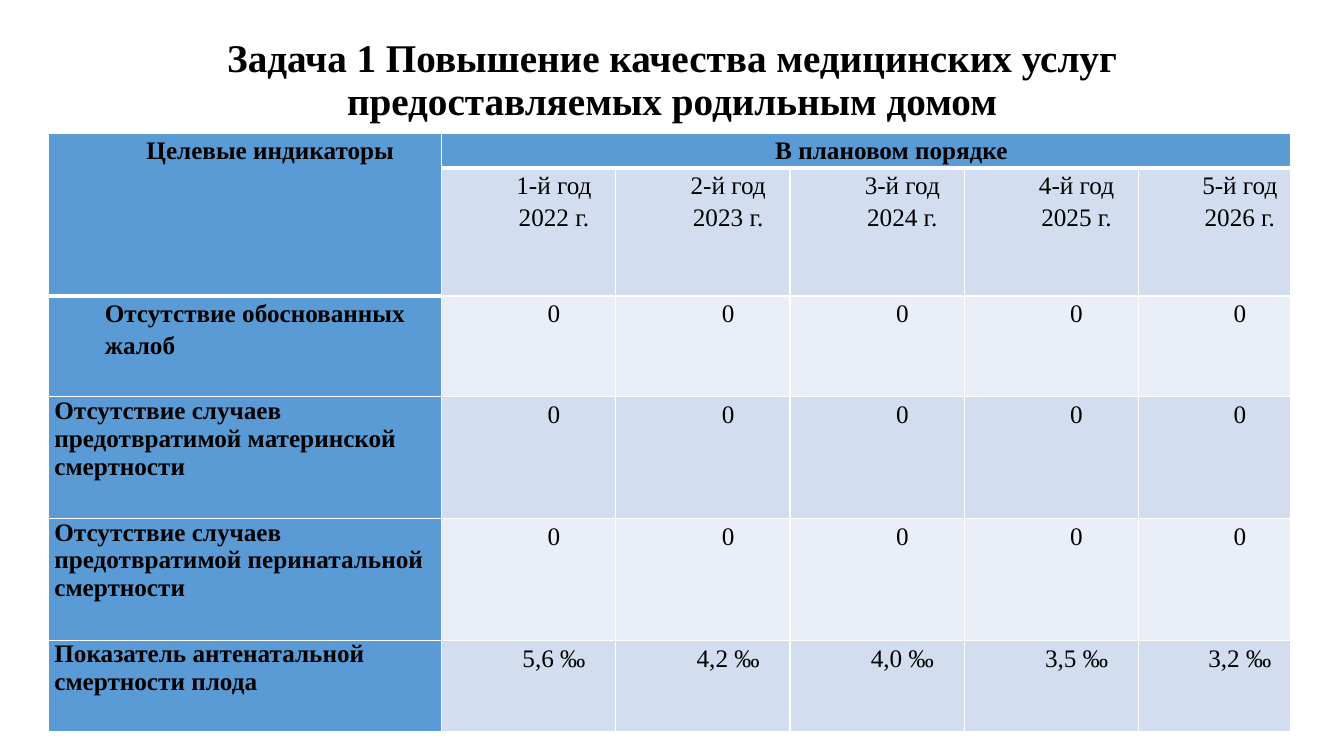
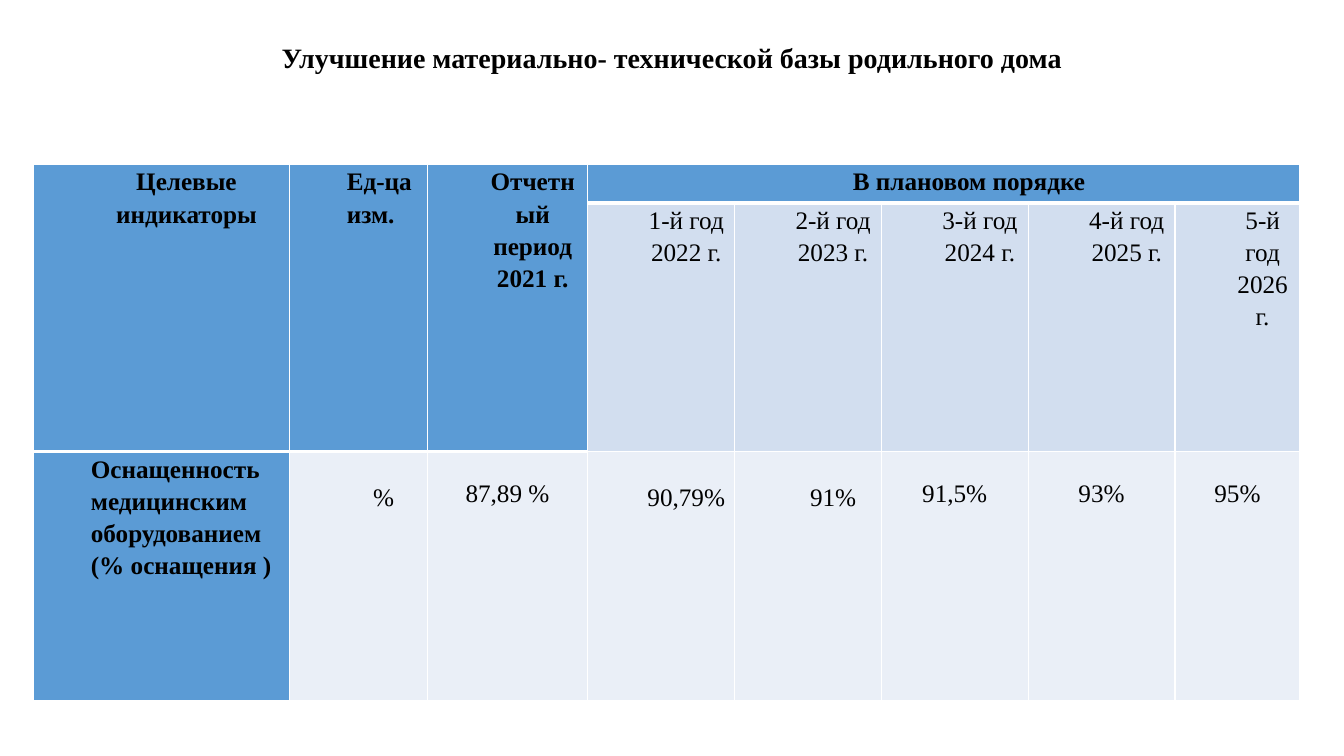
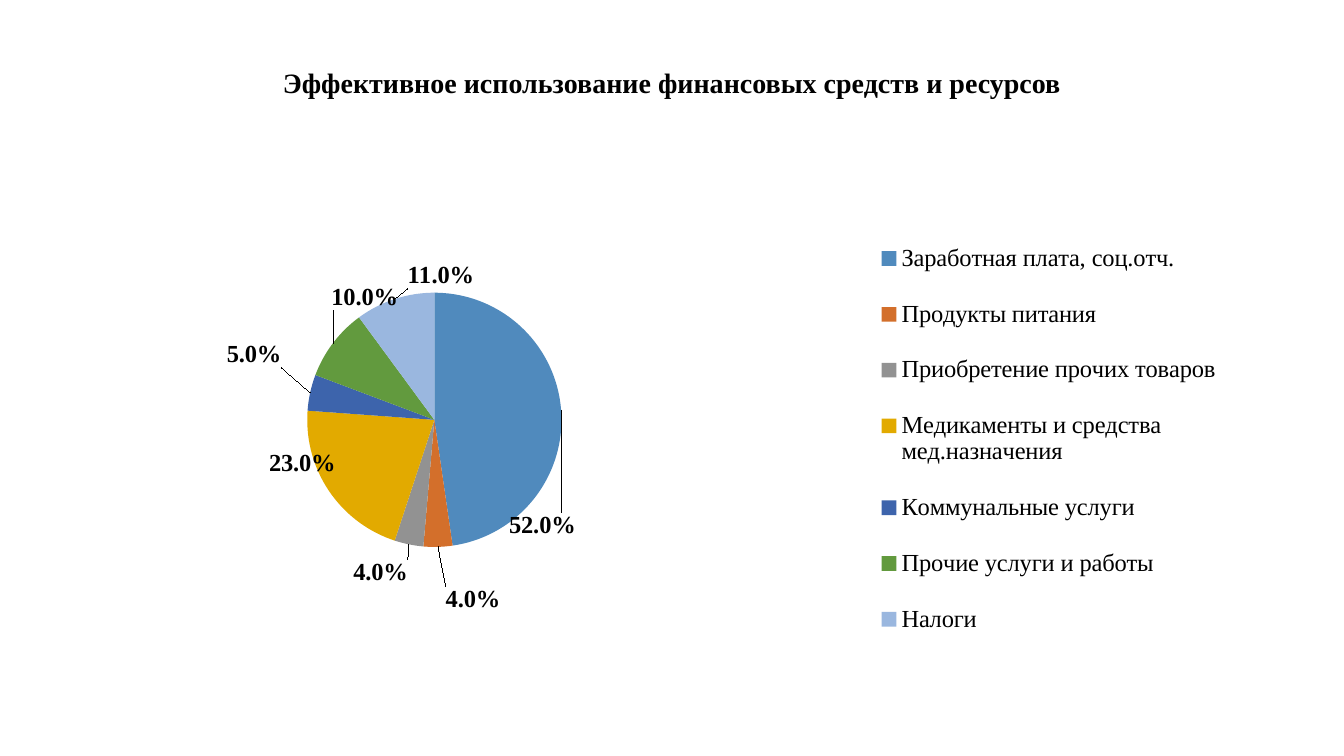
from lxml import etree
from pptx import Presentation
from pptx.chart.data import CategoryChartData
from pptx.dml.color import RGBColor
from pptx.enum.chart import XL_CHART_TYPE, XL_LABEL_POSITION, XL_LEGEND_POSITION
from pptx.enum.text import MSO_ANCHOR, PP_ALIGN
from pptx.oxml.ns import qn
from pptx.util import Cm, Pt

PIE = XL_CHART_TYPE.PIE
OUTSIDE_END = XL_LABEL_POSITION.OUTSIDE_END
RIGHT = XL_LEGEND_POSITION.RIGHT
MIDDLE = MSO_ANCHOR.MIDDLE
CENTER = PP_ALIGN.CENTER
LEFT = PP_ALIGN.LEFT

FONT = "Times New Roman"
COLORS = {
    "text": "000000",
    "header": "5B9BD5",
    "odd_band": "D2DEEF",
    "even_band": "EAEFF7",
    "border": "FFFFFF",
}
PIE_COLORS = ["508ABD", "D36F2B", "929292", "E2AA00", "3D64AC", "629A3E", "9AB7DF"]


def style_font(font, size, bold=False):
    font.name = FONT
    font.size = Pt(size)
    font.bold = bold
    font.color.rgb = RGBColor.from_string(COLORS["text"])


def set_layout(parent, index, **values):
    for old_layout in parent.findall(qn("c:layout")):
        parent.remove(old_layout)
    layout = etree.Element(qn("c:layout"))
    manual = etree.SubElement(layout, qn("c:manualLayout"))
    for name, value in values.items():
        etree.SubElement(manual, qn(f"c:{name}")).set("val", str(value))
    parent.insert(index, layout)


presentation = Presentation()
presentation.slide_width = Cm(33.87)
presentation.slide_height = Cm(19.05)

titles = [
    ("Задача 1 Повышение качества медицинских услуг предоставляемых родильным домом", 28, 0.95),
    ("Улучшение материально- технической базы родильного дома", 20, 0.4),
    ("Эффективное использование финансовых средств и ресурсов", 20, 1.02),
]
slides = []
for title, size, top in titles:
    slide = presentation.slides.add_slide(presentation.slide_layouts[6])
    slides.append(slide)
    title_box = slide.shapes.add_textbox(Cm(2.33), Cm(top), Cm(29.21), Cm(2.2))
    title_frame = title_box.text_frame
    title_frame.word_wrap = True
    title_frame.vertical_anchor = MIDDLE
    title_frame.text = title
    paragraph = title_frame.paragraphs[0]
    paragraph.alignment = CENTER
    paragraph.line_spacing = 0.9
    style_font(paragraph.font, size, True)

years = [f"{number}-й год\n{2021 + number} г." for number in range(1, 6)]
plan_header = ["В плановом порядке"] + [""] * 4
tables = [
    {
        "left": 1.22,
        "top": 3.35,
        "columns": [9.91] + [4.39] * 4 + [3.84],
        "heights": [0.84, 3.23, 2.54, 3.07, 3.07, 2.31],
        "label_columns": 1,
        "side_margin": 0.15,
        "left_aligned": {(2, 0), (3, 0), (4, 0), (5, 0)},
        "plain": {(3, 0), (4, 0), (5, 0)},
        "lowered": set(),
        "rows": [
            ["Целевые индикаторы"] + plan_header,
            [""] + years,
            ["Отсутствие обоснованных жалоб"] + ["0"] * 5,
            ["Отсутствие случаев предотвратимой материнской смертности"] + ["0"] * 5,
            ["Отсутствие случаев предотвратимой перинатальной смертности"] + ["0"] * 5,
            ["Показатель антенатальной смертности плода", "5,6 ‰", "4,2 ‰", "4,0 ‰", "3,5 ‰", "3,2 ‰"],
        ],
    },
    {
        "left": 0.84,
        "top": 4.14,
        "columns": [6.45, 3.48, 4.04] + [3.7] * 4 + [3.15],
        "heights": [0.97, 6.27, 6.27],
        "label_columns": 3,
        "side_margin": 0.18,
        "left_aligned": {(0, 1), (2, 0)},
        "plain": {(2, 2), (2, 5), (2, 6), (2, 7)},
        "lowered": {(2, column) for column in range(1, 8)},
        "rows": [
            ["Целевые индикаторы", "Ед-ца изм.", "Отчетный период 2021 г."] + plan_header,
            [""] * 3 + years,
            ["Оснащенность медицинским оборудованием (% оснащения )", "%", "87,89 %",
             "90,79%", "91%", "91,5%", "93%", "95%"],
        ],
    },
]

for slide, data in zip(slides, tables):
    columns, heights, label_columns = data["columns"], data["heights"], data["label_columns"]
    table = slide.shapes.add_table(
        len(heights), len(columns), Cm(data["left"]), Cm(data["top"]),
        Cm(sum(columns)), Cm(sum(heights)),
    ).table
    table.first_row = False
    table.horz_banding = False
    for table_column, width in zip(table.columns, columns):
        table_column.width = Cm(width)
    for table_row, height in zip(table.rows, heights):
        table_row.height = Cm(height)
    for column in range(label_columns):
        table.cell(0, column).merge(table.cell(1, column))
    table.cell(0, label_columns).merge(table.cell(0, len(columns) - 1))

    header_cells = {(0, column) for column in range(len(columns))}
    header_cells |= {(1, column) for column in range(label_columns)}
    for row, texts in enumerate(data["rows"]):
        for column, text in enumerate(texts):
            place = (row, column)
            cell = table.cell(row, column)
            cell.margin_left = cell.margin_right = Cm(data["side_margin"])
            cell.margin_top = Cm(0.71 if place in data["lowered"] else 0)
            cell.margin_bottom = Cm(0)
            is_label = place in header_cells or column == 0
            band = "odd_band" if row % 2 else "even_band"

            properties = cell._tc.get_or_add_tcPr()
            border_widths = {
                "lnL": 1,
                "lnR": 1,
                "lnT": 3 if (row - 1, column) in header_cells else 1,
                "lnB": 3 if place in header_cells else 1,
            }
            for side, width in border_widths.items():
                line = etree.SubElement(properties, qn(f"a:{side}"), w=str(Pt(width)))
                line_fill = etree.SubElement(line, qn("a:solidFill"))
                etree.SubElement(line_fill, qn("a:srgbClr"), val=COLORS["border"])
            cell.fill.solid()
            cell.fill.fore_color.rgb = RGBColor.from_string(COLORS["header" if is_label else band])

            cell.text_frame.text = text
            for paragraph in cell.text_frame.paragraphs:
                paragraph.alignment = LEFT if place in data["left_aligned"] else CENTER
                if place not in data["plain"]:
                    paragraph.line_spacing = 1.15
                    paragraph._p.get_or_add_pPr().set("marL", str(Cm(1.27)))
                style_font(paragraph.font, 18, is_label)

expenses = [
    ("Заработная плата, соц.отч.", 0.52, -0.05, 0.24),
    ("Продукты питания", 0.04, 0.03, 0.07),
    ("Приобретение прочих товаров", 0.04, 0, 0.02),
    ("Медикаменты и средства мед.назначения", 0.23, 0.01, -0.09),
    ("Коммунальные услуги", 0.05, -0.02, -0.05),
    ("Прочие услуги и работы", 0.1, 0.06, -0.06),
    ("Налоги", 0.11, 0.07, -0.01),
]
chart_data = CategoryChartData(number_format="0.0%")
chart_data.categories = [expense[0] for expense in expenses]
chart_data.add_series("Series 1", [expense[1] for expense in expenses])
chart = slides[2].shapes.add_chart(
    PIE, Cm(2.33), Cm(5.08), Cm(29.21), Cm(12.09), chart_data
).chart
chart.has_title = False
style_font(chart.font, 17.5)
chart.plots[0].vary_by_categories = True

chart.has_legend = True
chart.legend.position = RIGHT
chart.legend.include_in_layout = False
style_font(chart.legend.font, 17.5)

series = chart.plots[0].series[0]
labels = series.data_labels
labels.show_value = True
labels.number_format = "0.0%"
labels.number_format_is_linked = False
labels.position = OUTSIDE_END
style_font(labels.font, 17.5, True)
for index, color in enumerate(PIE_COLORS):
    point = series.points[index]
    point.format.fill.solid()
    point.format.fill.fore_color.rgb = RGBColor.from_string(color)
    style_font(point.data_label.font, 17.5, True)
    point.data_label.position = OUTSIDE_END

for label, (name, share, shift_x, shift_y) in zip(chart.element.xpath("//c:dLbl"), expenses):
    set_layout(label, 1, x=shift_x, y=shift_y)
set_layout(chart.element.xpath("//c:plotArea")[0], 0, layoutTarget="inner",
           xMode="edge", yMode="edge", x=0.08, y=0.19, w=0.43, h=0.53)
set_layout(chart.element.xpath("//c:legend")[0], 1,
           xMode="edge", yMode="edge", x=0.67, y=0.03, w=0.31, h=0.93)

presentation.save("out.pptx")
